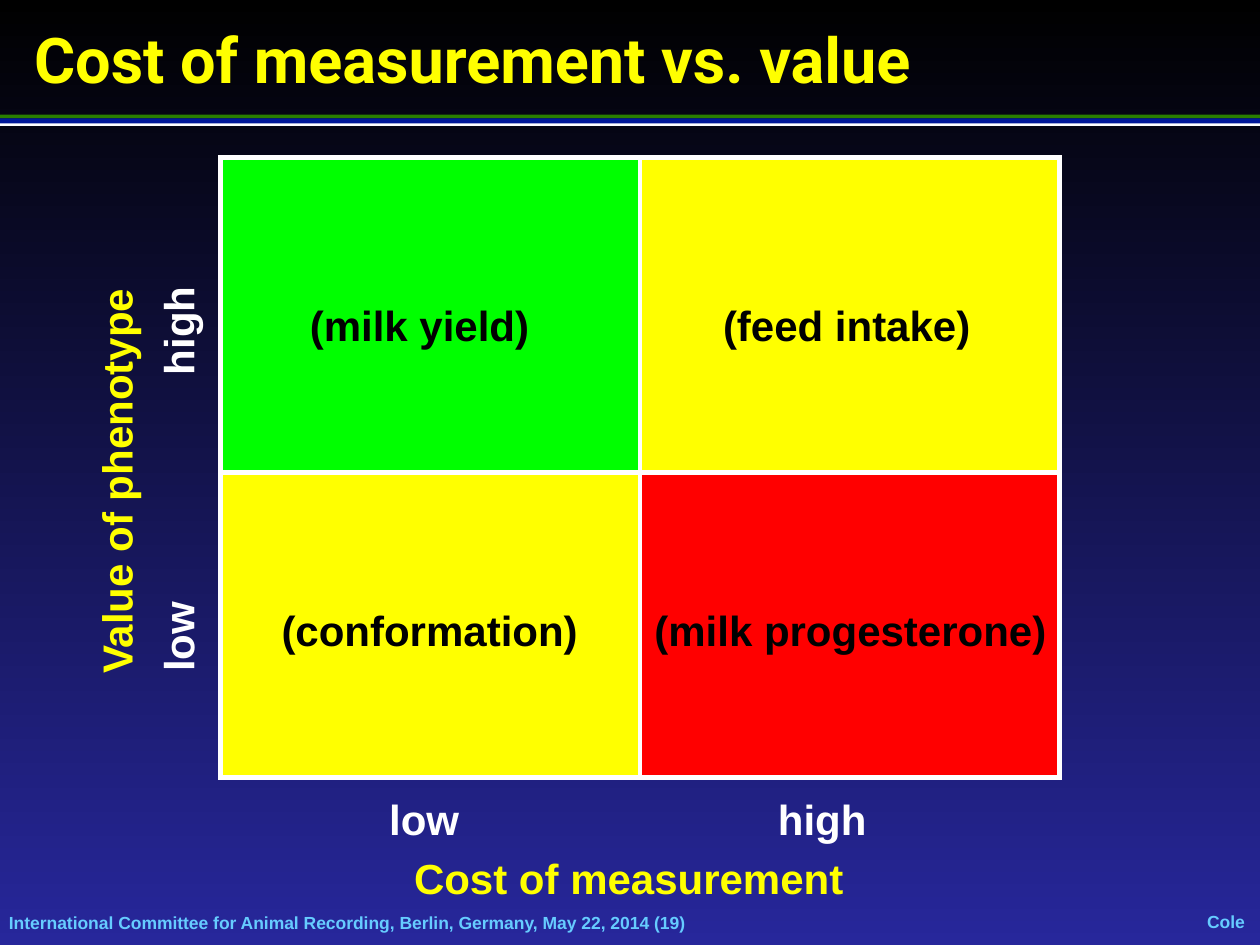
"""Build a two-by-two matrix slide comparing measurement cost with phenotype value."""
from lxml.etree import SubElement
from pptx import Presentation
from pptx.dml.color import RGBColor
from pptx.enum.shapes import MSO_SHAPE
from pptx.enum.text import MSO_ANCHOR, MSO_AUTO_SIZE, PP_ALIGN
from pptx.oxml.ns import qn
from pptx.util import Inches, Pt

WIDTH, HEIGHT = 10, 7.5
YELLOW, WHITE, BLACK, SKY = "FFFF00", "FFFFFF", "000000", "66CCFF"
LEFT, CENTER = PP_ALIGN.LEFT, PP_ALIGN.CENTER

TITLE = "Cost of measurement vs. value"
BACKGROUND = [BLACK, "27279B"]
RULES = [(0.91, 0.03, "2A7E00"), (0.97, 0.03, WHITE), (0.94, 0.04, "001799")]
FOOTERS = [
    ("International Committee for Animal Recording, Berlin, Germany, May 22, 2014 (19)",
     (0.07, 7.24, 8.09, 0.17), LEFT, True),
    ("Cole", (9.58, 7.23, 0.3, 0.17), CENTER, False),
]
MATRIX_LEFT, MATRIX_TOP = 1.75, 1.25
COLUMN_WIDTHS = [3.33, 3.33]
ROW_HEIGHTS = [2.5, 2.42]
CELL_FILLS = [["00FF00", YELLOW], [YELLOW, "FF0000"]]
LABEL_HEIGHT = 0.5
HIGH_ROW, LOW_ROW, TICK_ROW = 2.58, 5, 6.5
LABELS = [
    ("low", 3.37, TICK_ROW, 0.76, WHITE, LEFT, 0),
    ("high", 6.53, TICK_ROW, 0.91, WHITE, LEFT, 0),
    ("Cost of measurement", 4.99, 6.97, 3.64, YELLOW, CENTER, 0),
    ("low", 1.41, 5.05, 0.76, WHITE, LEFT, 270),
    ("high", 1.41, 2.62, 0.91, WHITE, LEFT, 270),
    ("Value of phenotype", 0.92, 3.82, 3.29, YELLOW, CENTER, 270),
    ("(milk yield)", 3.33, HIGH_ROW, 1.96, BLACK, CENTER, 0),
    ("(milk progesterone)", 6.75, LOW_ROW, 3.34, BLACK, CENTER, 0),
    ("(feed intake)", 6.72, HIGH_ROW, 2.18, BLACK, CENTER, 0),
    ("(conformation)", 3.41, LOW_ROW, 2.58, BLACK, CENTER, 0),
]


def color(value):
    return RGBColor.from_string(value)


def paint(target, value):
    target.fill.solid()
    target.fill.fore_color.rgb = color(value)


def write(shape, text, size, value, alignment, font="Arial"):
    paragraph = shape.text_frame.paragraphs[0]
    paragraph.alignment = alignment
    run = paragraph.add_run()
    run.text = text
    run.font.name = font
    run.font.size = Pt(size)
    run.font.bold = True
    run.font.color.rgb = color(value)
    return paragraph


def add_text(slide, box, text, size, value, alignment, wrap=False):
    shape = slide.shapes.add_textbox(*map(Inches, box))
    shape.text_frame.word_wrap = wrap
    shape.text_frame.auto_size = MSO_AUTO_SIZE.SHAPE_TO_FIT_TEXT
    write(shape, text, size, value, alignment)
    return shape


def add_background(slide):
    fill = slide.background.fill
    fill.gradient()
    fill.gradient_angle = 270
    for stop, value, position in zip(fill.gradient_stops, BACKGROUND, (0, 1)):
        stop.color.rgb = color(value)
        stop.position = position


def add_footers(slide):
    for text, box, alignment, wrap in FOOTERS:
        shape = add_text(slide, box, text, 10, SKY, alignment, wrap)
        frame = shape.text_frame
        frame.vertical_anchor = MSO_ANCHOR.MIDDLE
        frame.margin_left = frame.margin_right = 0
        frame.margin_top = frame.margin_bottom = 0
        frame.paragraphs[0].space_before = Pt(6.2)


def add_rules(slide):
    for top, height, value in RULES:
        shape = slide.shapes.add_shape(
            MSO_SHAPE.RECTANGLE, 0, Inches(top), Inches(WIDTH), Inches(height))
        shape.shadow.inherit = False
        paint(shape, value)
        shape.line.fill.background()


def format_title(slide):
    title = slide.shapes.title
    title.left, title.top = Inches(0.17), Inches(0.11)
    title.width, title.height = Inches(9.66), Inches(0.7)
    title.text_frame.auto_size = MSO_AUTO_SIZE.NONE
    title.text_frame.vertical_anchor = MSO_ANCHOR.MIDDLE
    write(title, TITLE, 36, YELLOW, LEFT, "Roboto")


def add_borders(cell):
    properties = cell._tc.get_or_add_tcPr()
    for index, side in enumerate(("lnL", "lnR", "lnT", "lnB")):
        line = SubElement(properties, qn(f"a:{side}"), w=str(Pt(3)))
        fill = SubElement(line, qn("a:solidFill"))
        SubElement(fill, qn("a:srgbClr"), val=WHITE)
        properties.insert(index, line)


def add_matrix(slide):
    table = slide.shapes.add_table(
        len(ROW_HEIGHTS), len(COLUMN_WIDTHS), Inches(MATRIX_LEFT), Inches(MATRIX_TOP),
        Inches(sum(COLUMN_WIDTHS)), Inches(sum(ROW_HEIGHTS))).table
    for column, width in zip(table.columns, COLUMN_WIDTHS):
        column.width = Inches(width)
    for row, height, fills in zip(table.rows, ROW_HEIGHTS, CELL_FILLS):
        row.height = Inches(height)
        for cell, value in zip(row.cells, fills):
            paint(cell, value)
            add_borders(cell)


def add_labels(slide):
    for text, center, middle, width, value, alignment, rotation in LABELS:
        box = (center - width / 2, middle - LABEL_HEIGHT / 2, width, LABEL_HEIGHT)
        add_text(slide, box, text, 24, value, alignment).rotation = rotation


def main():
    presentation = Presentation()
    presentation.slide_width = Inches(WIDTH)
    presentation.slide_height = Inches(HEIGHT)
    slide = presentation.slides.add_slide(presentation.slide_layouts[5])
    add_background(slide)
    add_footers(slide)
    add_rules(slide)
    format_title(slide)
    add_matrix(slide)
    add_labels(slide)
    presentation.save("out.pptx")


if __name__ == "__main__":
    main()
